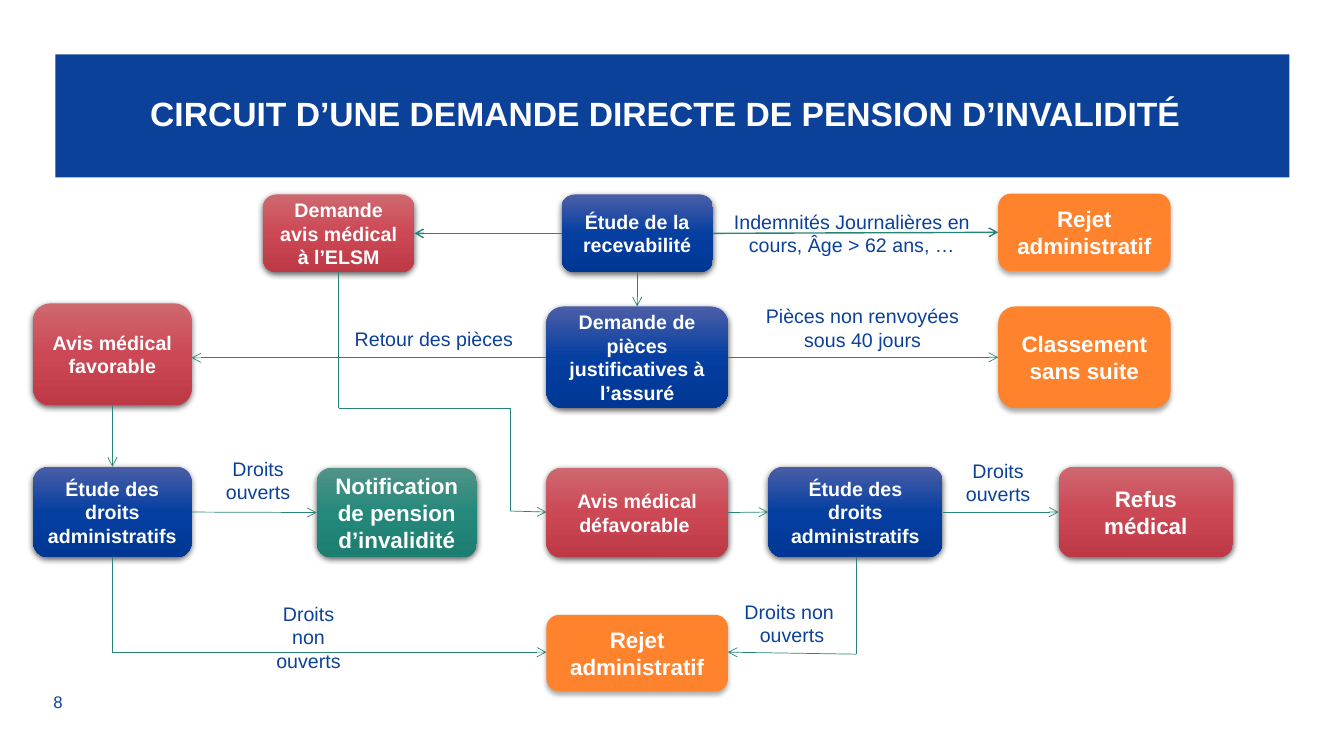
from itertools import pairwise

from lxml import etree
from pptx import Presentation
from pptx.dml.color import RGBColor
from pptx.enum.shapes import MSO_CONNECTOR, MSO_SHAPE
from pptx.enum.text import MSO_ANCHOR, PP_ALIGN
from pptx.oxml import parse_xml
from pptx.util import Inches, Pt

DRAWING = "http://schemas.openxmlformats.org/drawingml/2006/main"
STRAIGHT = MSO_CONNECTOR.STRAIGHT
RECTANGLE, ROUNDED = MSO_SHAPE.RECTANGLE, MSO_SHAPE.ROUNDED_RECTANGLE
MIDDLE, TOP = MSO_ANCHOR.MIDDLE, MSO_ANCHOR.TOP
LEFT, CENTER = PP_ALIGN.LEFT, PP_ALIGN.CENTER
NORTH, WEST, SOUTH, EAST = range(4)

COLORS = {"blue": "0C419A", "white": "FFFFFF", "orange": "FF822D",
          "line": "298478", "shadow": "000000"}
GRADIENTS = {
    "navy": ("4B5EA7", "053FA1", "003794"),
    "red": ("CE6870", "CD4855", "BD3946"),
    "green": ("529388", "24897B", "1C7D71"),
}
# opacity in percent, then blur and distance in points
SOFT_SHADOW, DEEP_SHADOW = (32, 3.5, 2.2), (63, 4.5, 1.5)

# name: (box, fill, text size, text)
STEPS = {
    "eligibility": ((5.57, 1.93, 1.5, 0.77), "navy", 14, "Étude de la recevabilité"),
    "rejected": ((9.9, 1.92, 1.71, 0.77), "orange", 16, "Rejet administratif"),
    "documents": ((5.42, 3.04, 1.8, 1.01), "navy", 14,
                  "Demande de pièces justificatives à l’assuré"),
    "closed": ((9.9, 3.04, 1.71, 1.01), "orange", 16, "Classement sans suite"),
    "opinion": ((2.61, 1.93, 1.5, 0.77), "red", 14, "Demande avis médical à l’ELSM"),
    "favourable": ((0.33, 3.01, 1.57, 1.01), "red", 14, "Avis médical favorable"),
    "left rights": ((0.33, 4.63, 1.57, 0.9), "navy", 14, "Étude des droits administratifs"),
    "notified": ((3.14, 4.64, 1.59, 0.89), "green", 16,
                 "Notification de pension d’invalidité"),
    "no rights": ((5.42, 6.1, 1.8, 0.76), "orange", 16, "Rejet administratif"),
    "unfavourable": ((5.42, 4.64, 1.8, 0.89), "red", 14, "Avis médical défavorable "),
    "right rights": ((7.62, 4.63, 1.73, 0.9), "navy", 14, "Étude des droits administratifs"),
    "refused": ((10.5, 4.63, 1.73, 0.9), "red", 16, "Refus médical"),
}
# start step and side, end step and side, line width
LINKS = [
    ("eligibility", SOUTH, "documents", NORTH, 0.5),
    ("eligibility", EAST, "rejected", WEST, 1),
    ("eligibility", WEST, "opinion", EAST, 1),
    ("documents", EAST, "closed", WEST, 0.5),
    ("favourable", SOUTH, "left rights", NORTH, 0.5),
    ("left rights", EAST, "notified", WEST, 0.5),
    ("unfavourable", EAST, "right rights", WEST, 0.5),
    ("right rights", EAST, "refused", WEST, 0.5),
]
# corner points of the paths that bend or meet another path
ROUTES = [
    [(5.42, 3.55), (3.46, 3.55), (1.9, 3.55)],
    [(3.36, 2.7), (3.36, 3.54), (3.36, 4.05), (5.06, 4.05), (5.06, 5.07), (5.42, 5.08)],
    [(1.11, 5.53), (1.11, 6.47), (5.42, 6.47)],
    [(8.49, 5.53), (8.49, 6.49), (7.22, 6.47)],
]
LABELS = [
    ((3.42, 3.19, 1.96, 0.34), LEFT, ["Retour des pièces"]),
    ((7.48, 2.97, 2.15, 0.57), CENTER, ["Pièces non renvoyées sous 40 jours"]),
    ((7.07, 2.03, 2.76, 0.57), CENTER, ["Indemnités Journalières en cours, Âge > 62 ans, …"]),
    ((9.41, 4.5, 0.98, 0.57), CENTER, ["Droits", "ouverts"]),
    ((7.26, 5.9, 1.19, 0.57), CENTER, ["Droits non ", "ouverts"]),
    ((2.02, 4.48, 1.08, 0.57), CENTER, ["Droits ouverts"]),
    ((2.52, 5.92, 1.08, 0.57), CENTER, ["Droits non ouverts"]),
]


def rgb(name):
    return RGBColor.from_string(COLORS[name])


def write(shape, lines, size, color="blue", bold=False, align=LEFT, anchor=TOP):
    frame = shape.text_frame
    for name, value in {"word_wrap": True, "vertical_anchor": anchor}.items():
        setattr(frame, name, value)
    for index, line in enumerate(lines):
        para = frame.paragraphs[0] if index == 0 else frame.add_paragraph()
        para.alignment = align
        span = para.add_run()
        span.text = line
        for name, value in {"name": "Arial", "size": Pt(size), "bold": bold}.items():
            setattr(span.font, name, value)
        span.font.color.rgb = rgb(color)


def add_text(page, box, lines, size, **style):
    shape = page.shapes.add_textbox(*map(Inches, box))
    write(shape, lines, size, **style)


def add_panel(page, kind, box, fill):
    """Add a borderless shape filled with a plain colour or a gradient."""
    shape = page.shapes.add_shape(kind, *map(Inches, box))
    shape.shadow.inherit = False
    shape.line.fill.background()
    if fill in COLORS:
        shape.fill.solid()
        shape.fill.fore_color.rgb = rgb(fill)
    else:
        stops = "".join(
            f'<a:gs pos="{index * 50000}"><a:srgbClr val="{color}"/></a:gs>'
            for index, color in enumerate(GRADIENTS[fill]))
        gradient = parse_xml(
            f'<a:gradFill xmlns:a="{DRAWING}" rotWithShape="1"><a:gsLst>{stops}</a:gsLst>'
            '<a:lin ang="5400000" scaled="0"/></a:gradFill>')
        shape.element.spPr.find(f"{{{DRAWING}}}prstGeom").addnext(gradient)
    return shape


def add_shadow(shape, opacity, blur, distance):
    effects = shape.element.spPr.find(f"{{{DRAWING}}}effectLst")
    effects.append(parse_xml(
        f'<a:outerShdw xmlns:a="{DRAWING}" blurRad="{Pt(blur)}" dist="{Pt(distance)}" '
        f'dir="5400000" rotWithShape="0"><a:srgbClr val="{COLORS["shadow"]}">'
        f'<a:alpha val="{opacity * 1000}"/></a:srgbClr></a:outerShdw>'))


def add_title(page, box, text):
    banner = add_panel(page, RECTANGLE, box, "blue")
    banner.text_frame.margin_left = Inches(0.94)
    write(banner, [text], 24, color="white", bold=True, anchor=MIDDLE)
    banner.text_frame.paragraphs[0].line_spacing = 0.9


def add_step(page, box, fill, size, text):
    step = add_panel(page, ROUNDED, box, fill)
    add_shadow(step, *(SOFT_SHADOW if fill in COLORS else DEEP_SHADOW))
    write(step, [text], size, color="white", bold=True, align=CENTER, anchor=MIDDLE)
    return step


def add_line(page, start, end, width=0.5, arrow=True):
    line = page.shapes.add_connector(STRAIGHT, *map(Inches, (*start, *end)))
    line.line.color.rgb = rgb("line")
    line.line.width = Pt(width)
    if arrow:
        outline = line.line._get_or_add_ln()
        etree.SubElement(outline, f"{{{DRAWING}}}tailEnd", type="arrow")
    etree.SubElement(line.element.spPr, f"{{{DRAWING}}}effectLst")
    return line


def add_route(page, points):
    """Join the points with lines, with an arrowhead on the last one."""
    for start, end in pairwise(points):
        width = 1 if start == (3.36, 2.7) else 0.5
        add_line(page, start, end, width, arrow=end == points[-1])


def add_flow(page):
    steps = {name: add_step(page, *step) for name, step in STEPS.items()}
    for start, start_side, end, end_side, width in LINKS:
        line = add_line(page, (0, 0), (1, 1), width)
        line.begin_connect(steps[start], start_side)
        line.end_connect(steps[end], end_side)
    for points in ROUTES:
        add_route(page, points)
    for box, align, lines in LABELS:
        add_text(page, box, lines, 14, align=align)


def main():
    deck = Presentation()
    deck.slide_width, deck.slide_height = Inches(13.33), Inches(7.5)
    page = deck.slides.add_slide(deck.slide_layouts[6])
    add_text(page, (0.43, 6.81, 0.79, 0.31), ["8"], 12, anchor=MIDDLE)
    add_title(page, (0.55, 0.54, 12.24, 1.22),
              "CIRCUIT D’UNE DEMANDE DIRECTE DE PENSION D’INVALIDITÉ")
    add_flow(page)
    deck.save("out.pptx")


if __name__ == "__main__":
    main()
